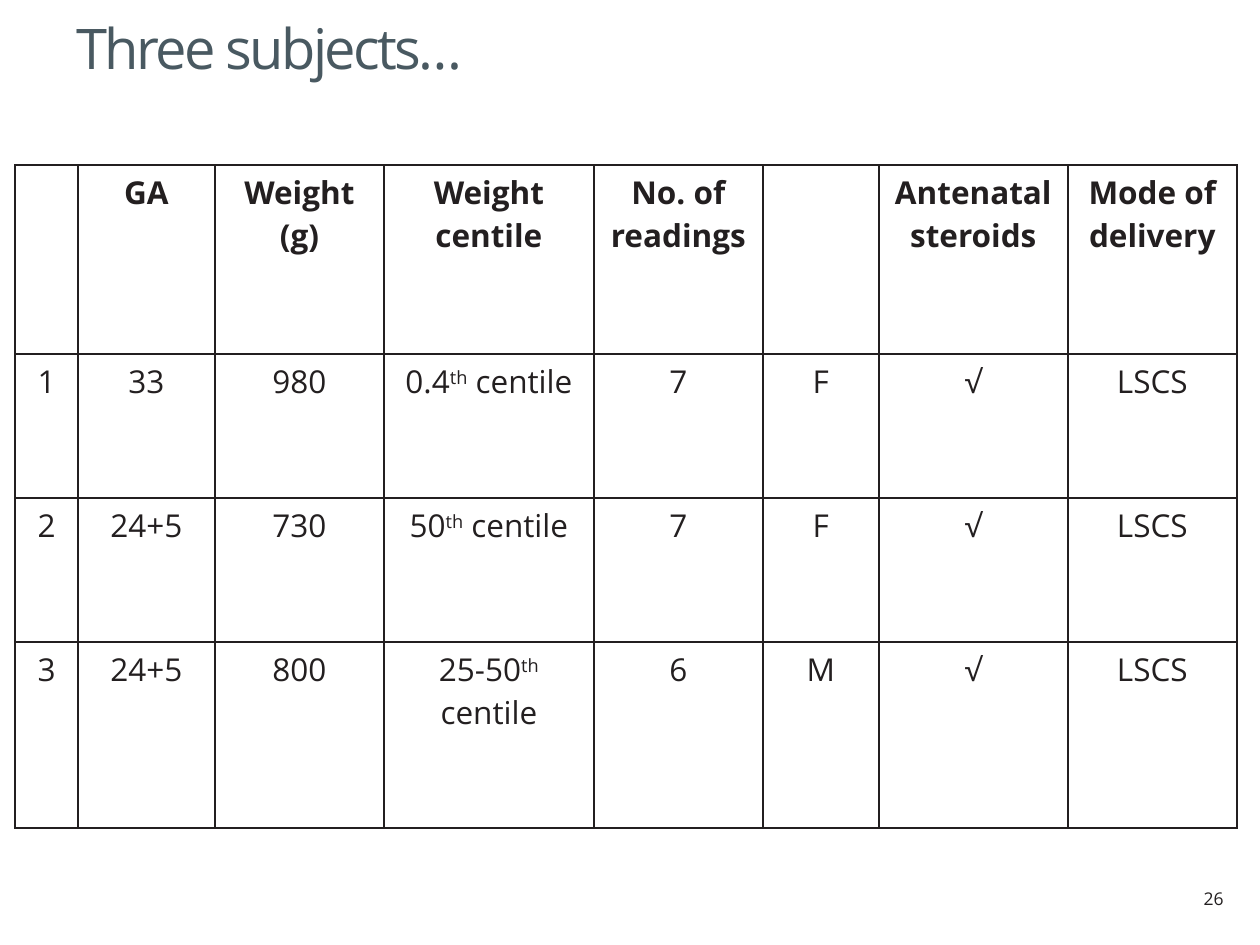
from dataclasses import dataclass

from lxml.etree import SubElement
from pptx import Presentation
from pptx.dml.color import RGBColor as RGB
from pptx.enum.text import MSO_ANCHOR as Anchor, PP_ALIGN as Align
from pptx.oxml.ns import qn
from pptx.util import Emu, Pt


@dataclass(frozen=True)
class Theme:
    font: str = "Open Sans"
    ink: str = "231F20"
    heading: str = "495961"
    title_size: int = 32
    body_size: int = 18
    number_size: int = 10
    border: int = 1


@dataclass(frozen=True)
class Box:
    left: int
    top: int
    width: int
    height: int


@dataclass(frozen=True)
class Subject:
    number: str
    age: str
    weight: str
    centile: str
    readings: str
    sex: str
    steroids: str = "√"
    delivery: str = "LSCS"

    def cells(self) -> list[str]:
        return [self.number, self.age, self.weight, f"{self.centile}^th^ centile",
                self.readings, self.sex, self.steroids, self.delivery]


THEME = Theme()
HEADERS = ["", "GA", "Weight\n(g)", "Weight centile", "No. of readings", "",
           "Antenatal steroids", "Mode of delivery"]
SUBJECTS = [
    Subject("1", "33", "980", "0.4", "7", "F"),
    Subject("2", "24+5", "730", "50", "7", "F"),
    Subject("3", "24+5", "800", "25-50", "6", "M"),
]
COLUMN_WIDTHS = [63, 137, 169, 210, 169, 116, 189, 169]
ROW_HEIGHTS = [189, 144, 144, 186]


def px(n: int) -> Emu:
    return Emu(round(n * 914400 / 126))


def write(tf, text: str, *, size: int = THEME.body_size, color: str = THEME.ink,
          bold: bool = False, align=Align.LEFT, spacing: int = 0) -> None:
    """Newlines part paragraphs; text between carets is superscript."""
    for i, line in enumerate(text.split("\n")):
        p = tf.add_paragraph() if i else tf.paragraphs[0]
        p.alignment = align
        for j, part in enumerate(line.split("^")):
            r = p.add_run()
            r.text = part
            r.font.name, r.font.size, r.font.bold = THEME.font, Pt(size), bold
            r.font.color.rgb = RGB.from_string(color)
            if spacing:
                r.font._element.set("spc", str(spacing))
            if j % 2:
                r.font._element.set("baseline", "30000")


def add_text(s, box: Box, text: str, *, anchor=Anchor.TOP, **fmt):
    sp = s.shapes.add_textbox(px(box.left), px(box.top), px(box.width), px(box.height))
    tf = sp.text_frame
    tf.word_wrap = True
    tf.vertical_anchor = anchor
    write(tf, text, **fmt)
    return tf


def outline(cell) -> None:
    tcPr = cell._tc.get_or_add_tcPr()
    for side in ("lnL", "lnR", "lnT", "lnB"):
        ln = SubElement(tcPr, qn(f"a:{side}"), w=str(Pt(THEME.border)))
        fill = SubElement(ln, qn("a:solidFill"))
        SubElement(fill, qn("a:srgbClr"), val=THEME.ink)


def add_subject_table(s, left: int, top: int) -> None:
    rows = [HEADERS] + [subject.cells() for subject in SUBJECTS]
    table = s.shapes.add_table(len(rows), len(HEADERS), px(left), px(top),
                               px(sum(COLUMN_WIDTHS)), px(sum(ROW_HEIGHTS))).table
    table.first_row = table.horz_banding = False
    for column, width in zip(table.columns, COLUMN_WIDTHS):
        column.width = px(width)
    for i, (row, height) in enumerate(zip(table.rows, ROW_HEIGHTS)):
        row.height = px(height)
        for cell, text in zip(row.cells, rows[i]):
            outline(cell)
            cell.fill.background()
            if text:
                write(cell.text_frame, text, bold=i == 0, align=Align.CENTER)


def main() -> None:
    prs = Presentation()
    prs.slide_width, prs.slide_height = px(1260), px(945)
    s = prs.slides.add_slide(prs.slide_layouts[6])

    # Page number
    add_text(s, Box(1136, 882, 100, 34), "26", size=THEME.number_size, align=Align.RIGHT)

    # Title
    tf = add_text(s, Box(64, 0, 1121, 81), "Three subjects…", anchor=Anchor.BOTTOM,
                  size=THEME.title_size, color=THEME.heading, spacing=-150)
    tf.margin_top = tf.margin_bottom = 0

    # Subjects
    add_subject_table(s, 15, 165)

    prs.save("out.pptx")


if __name__ == "__main__":
    main()
